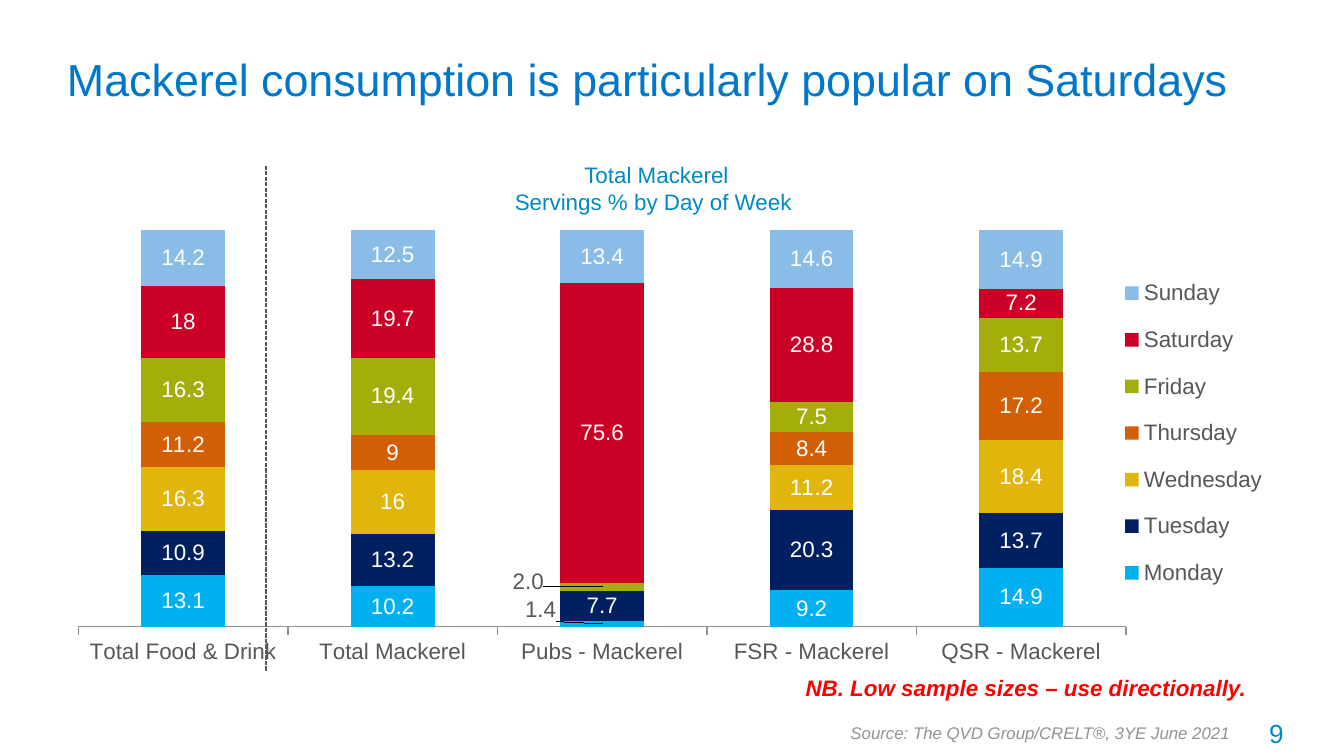
from lxml import etree
from pptx import Presentation, util as u
from pptx.chart.data import CategoryChartData
from pptx.dml.color import RGBColor
from pptx.enum import chart as ch, dml, shapes, text
from pptx.oxml import ns

# A 16:9 page on a grid of 100 columns by 56.25 rows, a tenth of an inch each
WIDTH = u.Inches(10)
HEIGHT = u.Emu(WIDTH * 9 // 16)
CELL = WIDTH / 100
FONT = "Arial"
COLOURS = {
    "title": "0077C8", "accent": "008AC0", "body": "54585A", "muted": "8E9396",
    "warning": "FF0000", "label": "FFFFFF",
    "Monday": "00B0F0", "Tuesday": "002060", "Wednesday": "E0B50C",
    "Thursday": "D35F05", "Friday": "A3AE0B", "Saturday": "CA0026",
    "Sunday": "89BCE6",
}
CATEGORIES = ["Total Food & Drink", "Total Mackerel", "Pubs - Mackerel",
              "FSR - Mackerel", "QSR - Mackerel"]
SERVINGS = {
    "Monday": [13.1, 10.2, 1.4, 9.2, 14.9],
    "Tuesday": [10.9, 13.2, 7.7, 20.3, 13.7],
    "Wednesday": [16.3, 16, 0, 11.2, 18.4],
    "Thursday": [11.2, 9, 0, 8.4, 17.2],
    "Friday": [16.3, 19.4, 2, 7.5, 13.7],
    "Saturday": [18, 19.7, 75.6, 28.8, 7.2],
    "Sunday": [14.2, 12.5, 13.4, 14.6, 14.9],
}
ONE_DECIMAL = "#,##0.0"
DECIMAL_DAYS = {"Monday", "Tuesday", "Friday"}
PUBS = CATEGORIES.index("Pubs - Mackerel")
# Pub labels beside the column: offsets as shares of the chart
MOVED_LABELS = {"Monday": (-0.05, -0.03), "Friday": (-0.06, -0.01)}
LEADER_URI = "{CE6537A1-D6FC-4f65-9D91-7224C49458BB}"
LEADER_NS = "http://schemas.microsoft.com/office/drawing/2012/chart"


def colour(name):
    return RGBColor.from_string(COLOURS[name])


def place(*cells):
    return [u.Emu(round(cell * CELL)) for cell in cells]


def set_font(font, size, name, **formats):
    for key, value in {"name": FONT, "size": u.Pt(size), **formats}.items():
        setattr(font, key, value)
    font.color.rgb = colour(name)


def add_text(page, area, lines, size, name, align="LEFT", wrap=True,
             anchor="TOP", **formats):
    frame = page.shapes.add_textbox(*place(*area)).text_frame
    frame.word_wrap = wrap
    frame.vertical_anchor = getattr(text.MSO_ANCHOR, anchor)
    for index, line in enumerate(lines):
        para = frame.add_paragraph() if index else frame.paragraphs[0]
        para.alignment = getattr(text.PP_ALIGN, align)
        span = para.add_run()
        span.text = line
        set_font(span.font, size, name, **formats)


def add_child(parent, tag, **attributes):
    return etree.SubElement(parent, ns.qn(tag), attributes)


def set_layout(element, index, target=None, mode=None, **sizes):
    """Give a chart part a manual position, in shares of the chart."""
    for old in element.findall(ns.qn("c:layout")):
        element.remove(old)
    layout = element.makeelement(ns.qn("c:layout"))
    manual = add_child(layout, "c:manualLayout")
    if target:
        add_child(manual, "c:layoutTarget", val=target)
    if mode:
        add_child(manual, "c:xMode", val=mode)
        add_child(manual, "c:yMode", val=mode)
    for key, value in sizes.items():
        add_child(manual, f"c:{key}", val=str(value))
    element.insert(index, layout)


def find_label(series, index):
    return series._element.xpath(f"c:dLbls/c:dLbl[c:idx/@val='{index}']")[0]


def hide_label(series, index):
    set_font(series.points[index].data_label.font, 12, "label")
    label = find_label(series, index)
    for child in list(label)[1:]:
        label.remove(child)
    add_child(label, "c:delete", val="1")


def move_label(series, index, x, y):
    set_font(series.points[index].data_label.font, 12, "body")
    label = find_label(series, index)
    set_layout(label, 1, x=x, y=y)
    label.insert(2, label.makeelement(
        ns.qn("c:numFmt"), {"formatCode": ONE_DECIMAL, "sourceLinked": "0"}))


def hide_leader_lines(labels):
    extension = add_child(add_child(labels._element, "c:extLst"), "c:ext",
                          uri=LEADER_URI)
    etree.SubElement(extension, f"{{{LEADER_NS}}}showLeaderLines",
                     {"val": "0"}, nsmap={"c15": LEADER_NS})


def style_series(series):
    day = series.name
    series.format.fill.solid()
    series.format.fill.fore_color.rgb = colour(day)
    labels = series.data_labels
    labels.show_value = True
    labels.number_format = ONE_DECIMAL if day in DECIMAL_DAYS else "General"
    labels.number_format_is_linked = False
    set_font(labels.font, 12, "label")
    if day in MOVED_LABELS:
        move_label(series, PUBS, *MOVED_LABELS[day])
    elif not series.values[PUBS]:
        hide_label(series, PUBS)
    hide_leader_lines(labels)


def add_servings_chart(page, area):
    data = CategoryChartData()
    data.categories = CATEGORIES
    for day, values in SERVINGS.items():
        data.add_series(day, values)
    chart = page.shapes.add_chart(
        ch.XL_CHART_TYPE.COLUMN_STACKED_100, *place(*area), data).chart
    set_font(chart.font, 12, "body")
    chart.has_title = False
    # Plot and axes
    plot = chart.plots[0]
    plot.gap_width, plot.overlap, plot.vary_by_categories = 150, 100, False
    chart.value_axis.visible = False
    chart.value_axis.has_major_gridlines = False
    chart.value_axis.maximum_scale = 1
    axis = chart.category_axis
    axis.major_tick_mark = ch.XL_TICK_MARK.OUTSIDE
    axis.format.line.color.rgb = colour("muted")
    set_layout(chart._chartSpace.chart.plotArea, 0, "inner", "edge",
               x=0.02, y=0, w=0.85, h=0.83)
    # Legend
    chart.has_legend = True
    chart.legend.position = ch.XL_LEGEND_POSITION.RIGHT
    chart.legend.include_in_layout = False
    set_layout(chart.legend._element, 1, None, "edge",
               x=0.86, y=0.06, w=0.13, h=0.73)
    for series in plot.series:
        style_series(series)


def add_divider(page, column, top, bottom):
    left, start, end = place(column, top, bottom)
    line = page.shapes.add_connector(
        shapes.MSO_CONNECTOR.STRAIGHT, left, end, left, start)
    line.line.color.rgb = colour("body")
    line.line.width = u.Pt(0.75)
    line.line.dash_style = dml.MSO_LINE.SQUARE_DOT
    add_child(line._element.spPr, "a:effectLst")


def main():
    deck = Presentation()
    deck.slide_width, deck.slide_height = WIDTH, HEIGHT
    page = deck.slides.add_slide(deck.slide_layouts[6])

    # Chart with its heading and divider
    add_servings_chart(page, (4, 17.1, 91.7, 35.6))
    add_text(page, (37.2, 11.5, 23.3, 5),
             ["Total Mackerel", "Servings % by Day of Week "],
             12, "accent", "CENTER", wrap=False)
    add_divider(page, 19.8, 12.3, 49.9)

    # Page number and title
    add_text(page, (88.5, 52.9, 8, 3.4), ["9"], 14, "accent", "RIGHT")
    add_text(page, (4, 2.3, 91.7, 7.1),
             ["Mackerel consumption is particularly popular on Saturdays"],
             24, "title", anchor="MIDDLE")

    # Notes
    add_text(page, (57, 49.7, 38.7, 3),
             ["NB. Low sample sizes – use directionally."],
             12, "warning", "CENTER", bold=True, italic=True)
    add_text(page, (62.3, 53.3, 31.6, 2.5),
             ["Source: The QVD Group/CRELT®, 3YE June 2021"],
             9, "muted", wrap=False, italic=True)
    deck.save("out.pptx")


if __name__ == "__main__":
    main()
